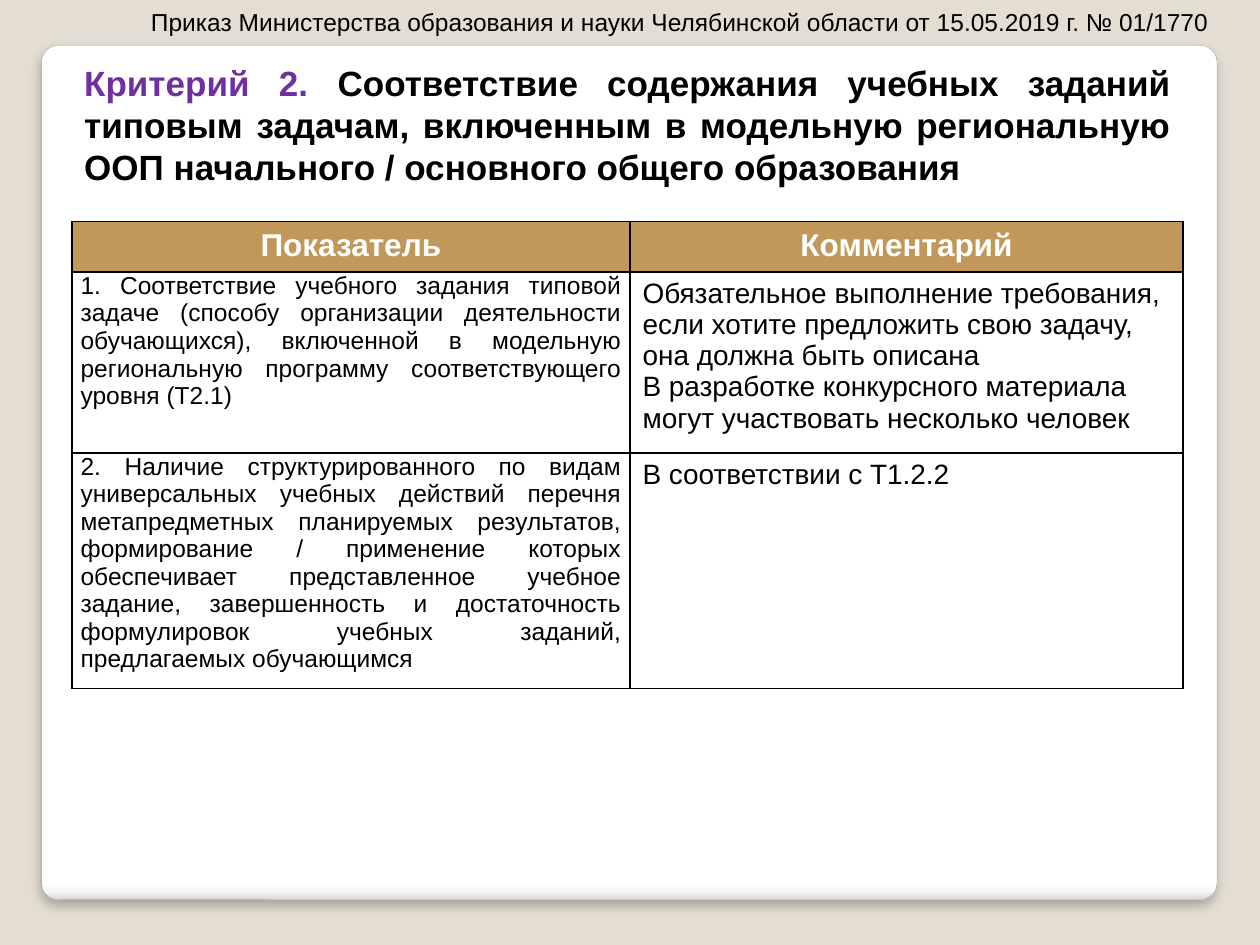
from dataclasses import dataclass

from lxml import etree
from pptx import Presentation
from pptx.dml.color import RGBColor
from pptx.enum.shapes import MSO_SHAPE
from pptx.enum.text import MSO_AUTO_SIZE, PP_ALIGN as Align
from pptx.oxml import parse_xml
from pptx.oxml.ns import nsdecls, qn
from pptx.util import Inches, Pt

FONT = "Arial"
BLACK = RGBColor(0x00, 0x00, 0x00)
WHITE = RGBColor(0xFF, 0xFF, 0xFF)
PURPLE = RGBColor(0x70, 0x30, 0xA0)
BEIGE = RGBColor(0xE3, 0xDE, 0xD1)
OCHRE = RGBColor(0xC1, 0x98, 0x59)
GREY = RGBColor(0xA4, 0xA4, 0xA4)
PANEL_STOPS = [(0, "FFFFFF"), (98, "FFFFFF"), (99, "F7F7F7"), (100, "DADADA")]


@dataclass
class TextStyle:
    size: int
    color: RGBColor = BLACK
    bold: bool = False
    align: Align = Align.LEFT


HEADING = TextStyle(18, WHITE, True, Align.CENTER)
INDICATOR = TextStyle(14, align=Align.JUSTIFY)
COMMENT = TextStyle(16)
TITLE = TextStyle(20, bold=True, align=Align.JUSTIFY)
SOURCE = TextStyle(14)


@dataclass
class TableRow:
    height: float
    texts: tuple[str, str]
    styles: tuple[TextStyle, TextStyle] = (INDICATOR, COMMENT)
    fill: RGBColor | None = None


ROWS = [
    TableRow(0.4, ("Показатель", "Комментарий"), (HEADING, HEADING), OCHRE),
    TableRow(1.43, (
        "1. Соответствие учебного задания типовой задаче (способу организации "
        "деятельности обучающихся), включенной в модельную региональную "
        "программу соответствующего уровня (Т2.1)",
        "Обязательное выполнение требования, если хотите предложить свою "
        "задачу, она должна быть описана\n"
        "В разработке конкурсного материала могут участвовать несколько человек")),
    TableRow(1.87, (
        "2. Наличие структурированного по видам универсальных учебных действий "
        "перечня метапредметных планируемых результатов, формирование / "
        "применение которых обеспечивает представленное учебное задание, "
        "завершенность и достаточность формулировок учебных заданий, "
        "предлагаемых обучающимся",
        "В соответствии с Т1.2.2")),
]
COLUMN_WIDTHS = (4.43, 4.39)


def format_text(text_frame, style: TextStyle) -> None:
    for paragraph in text_frame.paragraphs:
        paragraph.alignment = style.align
        for run in paragraph.runs:
            run.font.name = FONT
            run.font.size = Pt(style.size)
            run.font.bold = style.bold
            run.font.color.rgb = style.color


def add_text(slide, left: float, top: float, width: float, height: float,
             parts: list[str], style: TextStyle):
    box = slide.shapes.add_textbox(Inches(left), Inches(top), Inches(width), Inches(height))
    text_frame = box.text_frame
    text_frame.word_wrap = True
    text_frame.auto_size = MSO_AUTO_SIZE.SHAPE_TO_FIT_TEXT
    paragraph = text_frame.paragraphs[0]
    for part in parts:
        paragraph.add_run().text = part
    format_text(text_frame, style)
    return paragraph


def add_panel(slide) -> None:
    panel = slide.shapes.add_shape(MSO_SHAPE.ROUNDED_RECTANGLE, Inches(0.33), Inches(0.36),
                                   Inches(9.33), Inches(6.78))
    panel.adjustments[0] = 0.02
    panel.line.color.rgb = GREY
    panel.line.width = Pt(0.16)
    panel.shadow.inherit = False
    properties = panel.fill._xPr
    stops = "".join(f'<a:gs pos="{position * 1000}"><a:srgbClr val="{color}"/></a:gs>'
                    for position, color in PANEL_STOPS)
    gradient = parse_xml(f'<a:gradFill {nsdecls("a")}><a:gsLst>{stops}</a:gsLst>'
                         '<a:lin ang="5400000" scaled="0"/></a:gradFill>')
    properties.find(qn("a:prstGeom")).addnext(gradient)
    shadow = parse_xml(f'<a:outerShdw {nsdecls("a")} blurRad="{Pt(6)}" dist="{Pt(4)}" '
                       'dir="5400000" algn="t" rotWithShape="0"><a:srgbClr val="000000">'
                       '<a:alpha val="25000"/></a:srgbClr></a:outerShdw>')
    properties.find(qn("a:effectLst")).append(shadow)


def set_borders(cell) -> None:
    properties = cell._tc.get_or_add_tcPr()
    for index, side in enumerate(("lnL", "lnR", "lnT", "lnB")):
        border = etree.Element(qn(f"a:{side}"), w=str(Pt(1)))
        fill = etree.SubElement(border, qn("a:solidFill"))
        etree.SubElement(fill, qn("a:srgbClr"), val=str(BLACK))
        properties.insert(index, border)


def add_criteria_table(slide) -> None:
    frame = slide.shapes.add_table(len(ROWS), len(COLUMN_WIDTHS), Inches(0.57), Inches(1.76),
                                   Inches(sum(COLUMN_WIDTHS)),
                                   Inches(sum(row.height for row in ROWS)))
    table = frame.table
    for column, width in zip(table.columns, COLUMN_WIDTHS):
        column.width = Inches(width)
    for table_row, row in zip(table.rows, ROWS):
        table_row.height = Inches(row.height)
        for cell, text, style in zip(table_row.cells, row.texts, row.styles):
            cell.text_frame.text = text
            format_text(cell.text_frame, style)
            if style is INDICATOR:
                cell.margin_left = cell.margin_right = Inches(0.07)
                cell.margin_top = cell.margin_bottom = 0
            if row.fill is None:
                cell.fill.background()
            else:
                cell.fill.solid()
                cell.fill.fore_color.rgb = row.fill
            set_borders(cell)


def main() -> None:
    presentation = Presentation()
    presentation.slide_width = Inches(10)
    presentation.slide_height = Inches(7.5)
    slide = presentation.slides.add_slide(presentation.slide_layouts[6])

    # Background and panel
    slide.background.fill.solid()
    slide.background.fill.fore_color.rgb = BEIGE
    add_panel(slide)

    # Criterion title
    title = add_text(slide, 0.57, 0.44, 8.82, 1.11, [
        "Критерий 2. ",
        "Соответствие содержания учебных заданий типовым задачам, включенным "
        "в модельную региональную ООП начального / основного общего образования"], TITLE)
    title.runs[0].font.color.rgb = PURPLE

    # Indicators and comments
    add_criteria_table(slide)

    # Source document
    add_text(slide, 1.1, 0.01, 8.9, 0.34, [
        "Приказ Министерства образования и науки Челябинской области "
        "от 15.05.2019 г. № 01/1770"], SOURCE)

    presentation.save("out.pptx")


if __name__ == "__main__":
    main()
